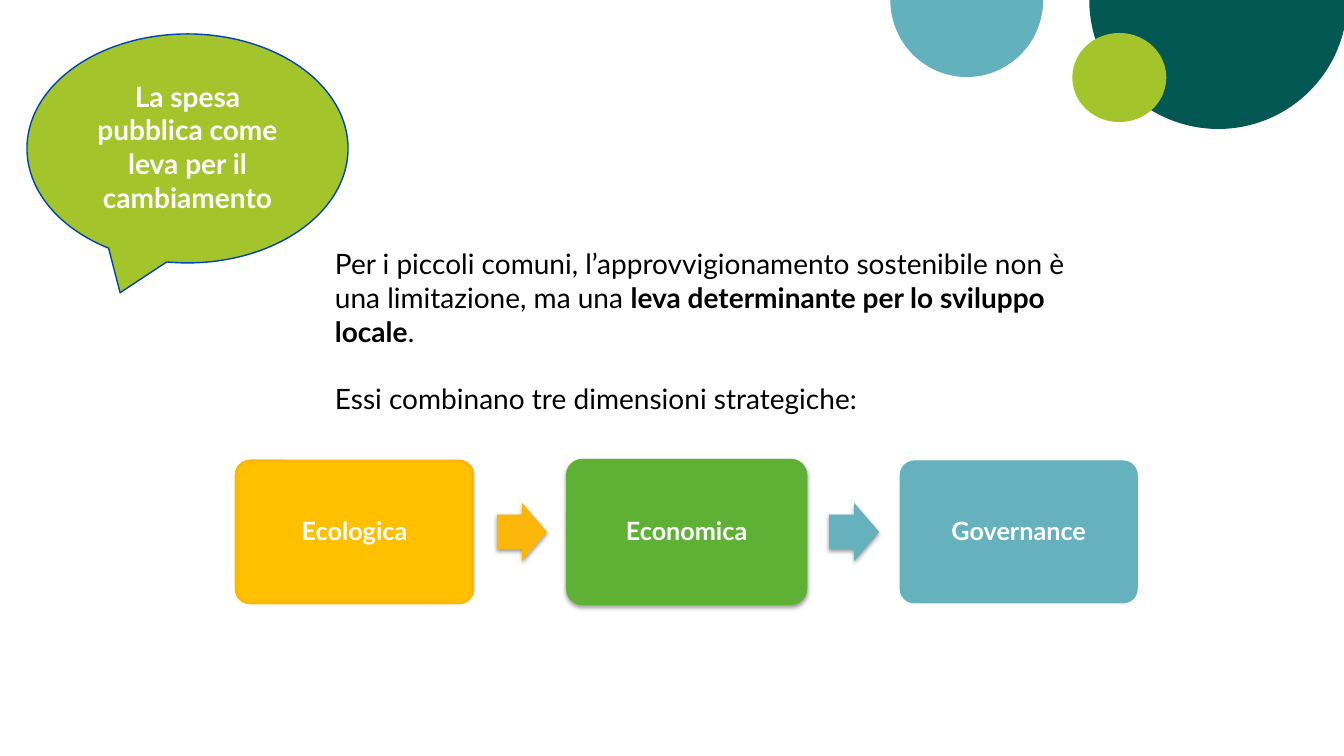
from lxml import etree
from pptx import Presentation
from pptx import util as u
from pptx.dml.color import RGBColor
from pptx.enum import shapes, text
from pptx.oxml.ns import qn

SCALE = 914400 / 100.8
COLOURS = {
    "forest": "035854", "teal": "64B1BE", "lime": "A3C42A", "navy": "0043B5",
    "amber": "FFC000", "amber_edge": "FAB609", "green": "5FB135",
    "lagoon": "65B1BE", "white": "FFFFFF", "black": "000000",
}
KIND = shapes.MSO_SHAPE


class SlideBuilder:
    """Hold the text style and current slide, and draw its elements."""

    def __init__(self, presentation):
        self.slide = presentation.slides.add_slide(presentation.slide_layouts[5])
        self.font = {"name": "Lato", "size": u.Pt(20), "bold": False}

    def colour(self, name):
        return RGBColor.from_string(COLOURS[name])

    def box(self, *lengths):
        return [u.Emu(round(length * SCALE)) for length in lengths]

    def apply(self, target, values):
        for name, value in values.items():
            setattr(target, name, value)

    def add_runs(self, paragraph, pieces, colour, paragraph_format, **font):
        self.apply(paragraph, paragraph_format)
        for content, bold in pieces:
            run = paragraph.add_run()
            run.text = content
            self.apply(run.font, {**self.font, **font, "bold": bold})
            run.font.color.rgb = self.colour(colour)

    def shape(self, kind, box, fill, adjustments=(), line=None, width=1, shadow=False):
        shape = self.slide.shapes.add_shape(kind, *self.box(*box))
        for index, value in enumerate(adjustments):
            shape.adjustments[index] = value
        shape.fill.solid()
        shape.fill.fore_color.rgb = self.colour(fill)
        if line:
            shape.line.color.rgb = self.colour(line)
            shape.line.width = u.Pt(width)
        else:
            shape.line.fill.background()
        shape.shadow.inherit = False
        if shadow:
            self.cast_shadow(shape)
        return shape

    def cast_shadow(self, shape):
        effects = shape._element.spPr.find(qn("a:effectLst"))
        outer = etree.SubElement(
            effects, qn("a:outerShdw"), blurRad=str(int(u.Pt(3.1))),
            dist=str(int(u.Pt(1.6))), dir="5400000", algn="ctr", rotWithShape="0")
        black = etree.SubElement(outer, qn("a:srgbClr"), val=COLOURS["black"])
        etree.SubElement(black, qn("a:alpha"), val="38000")

    def title(self, box, content):
        title = self.slide.shapes.title
        self.apply(title, dict(zip(("left", "top", "width", "height"), self.box(*box))))
        self.slide.shapes._spTree.append(title._element)
        self.apply(title.text_frame, {
            "word_wrap": True, "auto_size": text.MSO_AUTO_SIZE.NONE,
            "vertical_anchor": text.MSO_ANCHOR.MIDDLE})
        self.add_runs(title.text_frame.paragraphs[0], [(content, True)], "white",
                      {"alignment": text.PP_ALIGN.CENTER, "line_spacing": 1.0})

    def body(self, box, paragraphs, gap):
        frame = self.slide.shapes.add_textbox(*self.box(*box)).text_frame
        frame.word_wrap = True
        for index, pieces in enumerate(paragraphs):
            paragraph = frame.add_paragraph() if index else frame.paragraphs[0]
            self.add_runs(paragraph, pieces, "black",
                          {"space_before": u.Pt(gap if index else 0)})

    def card(self, box, label, fill, line, width, shadow):
        card = self.shape(KIND.ROUNDED_RECTANGLE, box, fill, [0.1], line, width, shadow)
        card.text_frame.vertical_anchor = text.MSO_ANCHOR.MIDDLE
        self.add_runs(card.text_frame.paragraphs[0], [(label, True)], "white",
                      {"alignment": text.PP_ALIGN.CENTER, "line_spacing": 0.9},
                      size=u.Pt(18))


def main():
    presentation = Presentation()
    presentation.slide_width = u.Inches(13.33)
    presentation.slide_height = u.Inches(7.5)
    builder = SlideBuilder(presentation)

    builder.shape(KIND.PIE, (1089, -129, 258, 258), "forest", [0, 108])
    builder.shape(KIND.PIE, (890, -78, 153, 155), "teal", [0, 108])
    builder.shape(KIND.OVAL, (1072, 33, 94, 89), "lime")
    builder.shape(KIND.OVAL_CALLOUT, (27, 34, 321, 229), "lime", [-0.21, 0.63], "navy")
    builder.title((74, 32, 227, 229), "La spesa pubblica come leva per il cambiamento")

    builder.body((325, 242, 784, 179), [
        [("Per i piccoli comuni, l’approvvigionamento sostenibile non è "
          "una limitazione, ma una ", False),
         ("leva determinante per lo sviluppo locale", True), (".", False)],
        [("Essi combinano tre dimensioni strategiche:", False)],
    ], gap=24)

    step = 332
    dimensions = [
        ("Ecologica", "amber", "amber_edge", 2, False),
        ("Economica", "green", "green", 3, True),
        ("Governance", "lagoon", "lagoon", 0.75, False),
    ]
    for index, dimension in enumerate(dimensions):
        builder.card((236 + index * step, 461, 237, 142), *dimension)
    for index, fill in enumerate(("amber_edge", "lagoon")):
        builder.shape(KIND.RIGHT_ARROW, (497 + index * step, 503, 50, 58), fill,
                      [0.6, 0.5], shadow=True)

    presentation.save("out.pptx")


if __name__ == "__main__":
    main()
